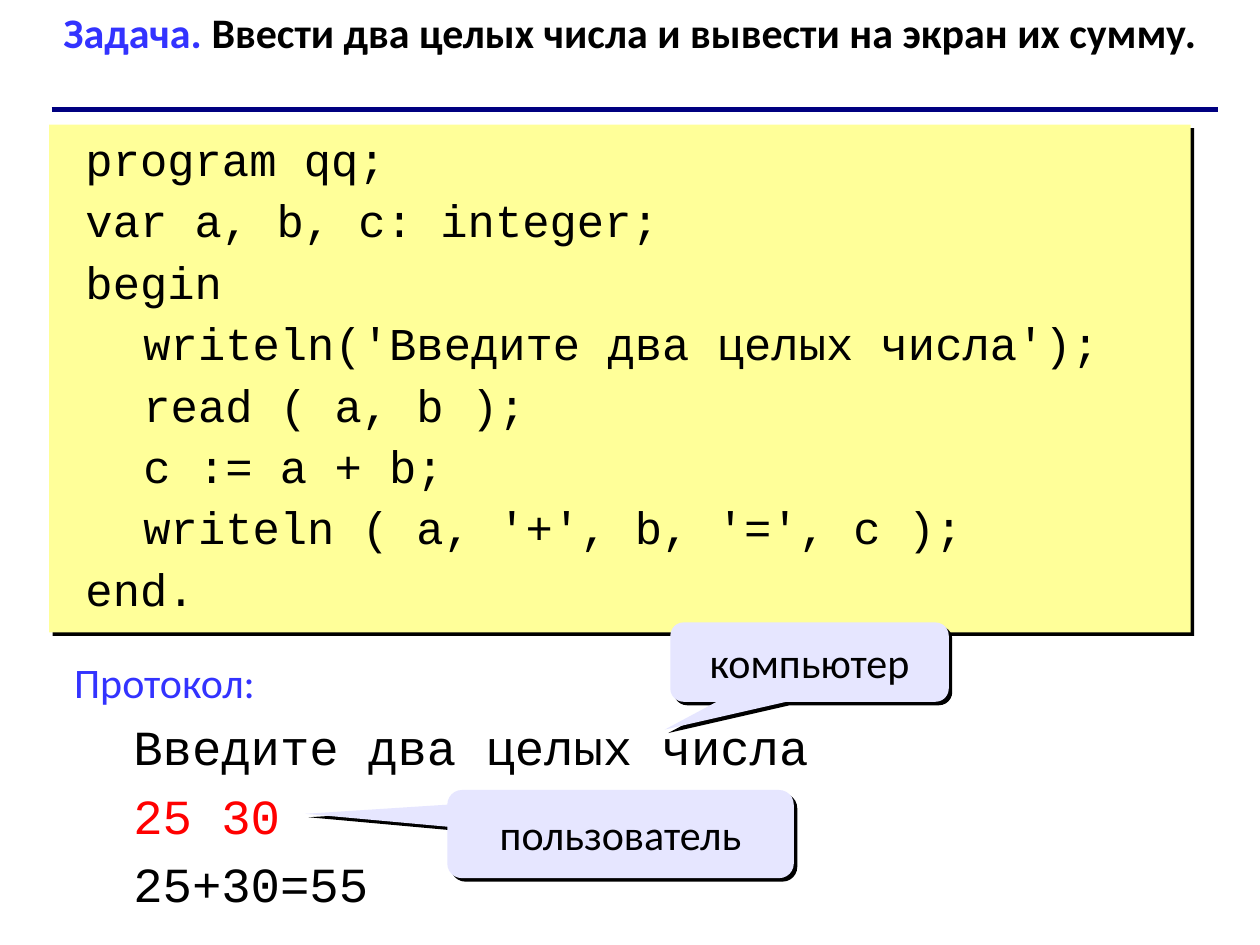
from lxml import etree
from pptx import Presentation
from pptx import util as u
from pptx.dml.color import RGBColor
from pptx.enum import shapes, text
from pptx.oxml.ns import qn

BLACK, BLUE, RED = "000000", "3333FF", "FF0000"
MONO, SANS = "Courier New", "Calibri"


def color(value):
    return RGBColor.from_string(value)


def add_run(paragraph, words, size, font, ink=BLACK, bold=False):
    run = paragraph.add_run()
    run.text = words
    run.font.size = u.Pt(size)
    run.font.name = font
    run.font.bold = bold
    run.font.color.rgb = color(ink)


prs = Presentation()
prs.slide_width, prs.slide_height = u.Inches(10), u.Inches(7.5)
slide = prs.slides.add_slide(prs.slide_layouts[6])

# Rule under the task
rule = slide.shapes.add_connector(
    shapes.MSO_CONNECTOR.STRAIGHT, u.Inches(0.41), u.Inches(0.87), u.Inches(9.67), u.Inches(0.87))
rule.line.color.rgb = color("000080")
rule.line.width = u.Pt(3)
etree.SubElement(rule._element.spPr, qn("a:effectLst"))

# Program listing
listing = slide.shapes.add_shape(
    shapes.MSO_SHAPE.RECTANGLE, u.Inches(0.39), u.Inches(0.99), u.Inches(9.06), u.Inches(4.03))
listing.fill.solid()
listing.fill.fore_color.rgb = color("FFFF99")
frame = listing.text_frame
frame.vertical_anchor = text.MSO_ANCHOR.TOP
program = """program qq;
var a, b, c: integer;
begin
   writeln('Введите два целых числа');
   read ( a, b );
   c := a + b;
   writeln ( a, '+', b, '=', c );
end."""
for number, code in enumerate(program.split("\n")):
    paragraph = frame.add_paragraph() if number else frame.paragraphs[0]
    paragraph.alignment = text.PP_ALIGN.LEFT
    margin = 0 if code.startswith(" ") else 0.19
    paragraph._p.get_or_add_pPr().set("marL", str(u.Inches(margin)))
    if number:
        paragraph.space_before = u.Pt(3.9)
    add_run(paragraph, code, 26, MONO)

# Session protocol
protocol = slide.shapes.add_textbox(u.Inches(0.49), u.Inches(5.16), u.Inches(9.06), u.Inches(2.18))
frame = protocol.text_frame
frame.word_wrap = True
add_run(frame.paragraphs[0], "Протокол:", 24, SANS, BLUE)
for words, ink in (("Введите два целых числа", BLACK), ("25 30", RED), ("25+30=55", BLACK)):
    paragraph = frame.add_paragraph()
    paragraph._p.get_or_add_pPr().set("marL", str(u.Inches(0.47)))
    paragraph.space_before = u.Pt(5.6)
    add_run(paragraph, words, 28, MONO, ink)

# Callouts naming who writes each line
speakers = []
for who, left, top, width, height, tip_x, tip_y in (
    ("компьютер", 5.32, 4.94, 2.21, 0.63, -0.52, 0.85),
    ("пользователь", 3.55, 6.27, 2.75, 0.7, -0.91, -0.23),
):
    speaker = slide.shapes.add_shape(
        shapes.MSO_SHAPE.ROUNDED_RECTANGULAR_CALLOUT,
        u.Inches(left), u.Inches(top), u.Inches(width), u.Inches(height))
    speaker.adjustments[0], speaker.adjustments[1] = tip_x, tip_y
    speaker.fill.solid()
    speaker.fill.fore_color.rgb = color("E6E6FF")
    speaker.text_frame.vertical_anchor = text.MSO_ANCHOR.MIDDLE
    paragraph = speaker.text_frame.paragraphs[0]
    paragraph.alignment = text.PP_ALIGN.CENTER
    add_run(paragraph, who, 24, SANS)
    speakers.append(speaker)

# Hard black shadow down to the right
for panel in (listing, *speakers):
    panel.line.fill.background()
    panel.shadow.inherit = False
    effects = panel._element.spPr.find(qn("a:effectLst"))
    shadow = etree.SubElement(
        effects, qn("a:outerShdw"), dist=str(u.Pt(2.8)), dir="2700000", algn="ctr", rotWithShape="0")
    etree.SubElement(shadow, qn("a:srgbClr"), val=BLACK)

# Task statement
task = slide.shapes.add_textbox(0, 0, u.Inches(10), u.Inches(0.5))
task.text_frame.word_wrap = True
paragraph = task.text_frame.paragraphs[0]
paragraph.alignment = text.PP_ALIGN.CENTER
add_run(paragraph, "Задача. ", 24, SANS, BLUE, True)
add_run(paragraph, "Ввести два целых числа и вывести на экран их сумму.", 24, SANS, BLACK, True)

prs.save("out.pptx")
